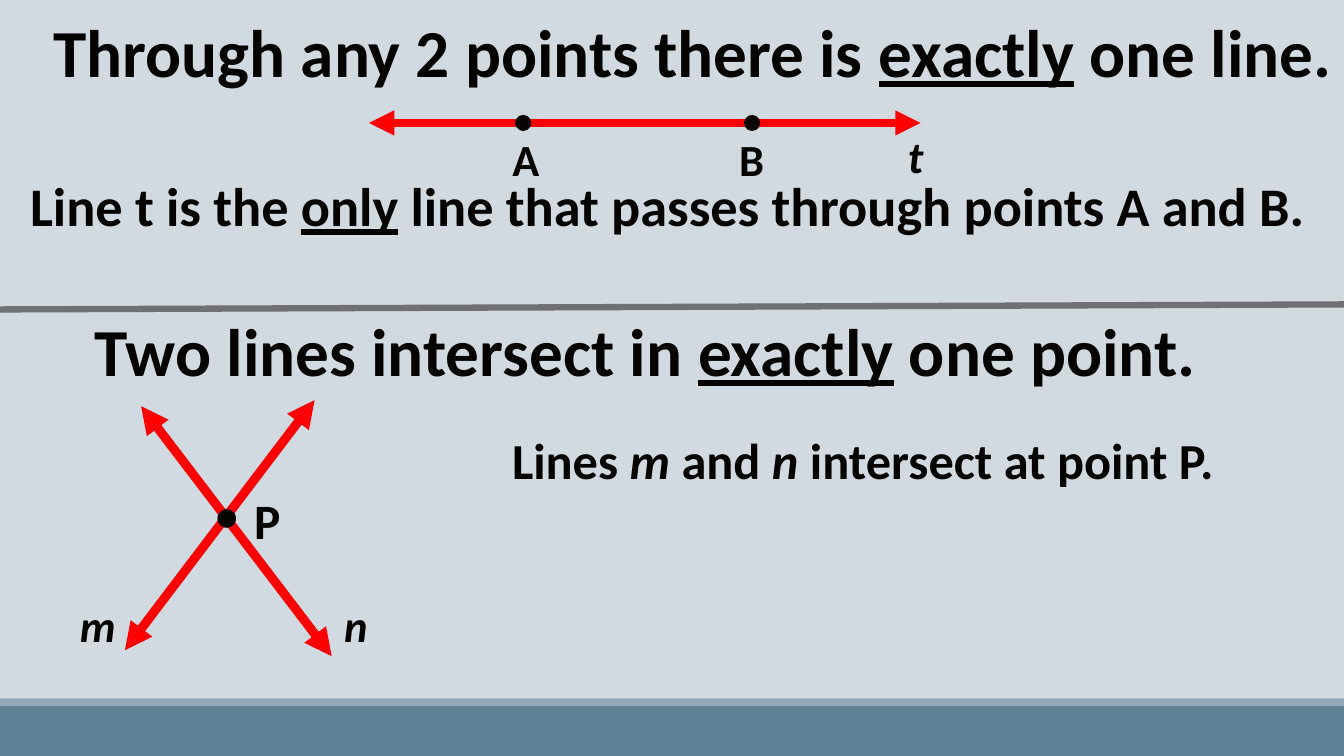
from dataclasses import dataclass

from lxml.etree import SubElement
from pptx import Presentation
from pptx.dml.color import RGBColor
from pptx.enum.shapes import MSO_CONNECTOR, MSO_SHAPE
from pptx.enum.text import MSO_ANCHOR, MSO_AUTO_SIZE, PP_ALIGN
from pptx.oxml.ns import qn
from pptx.util import Inches, Pt

INK = "040300"
RED = "FF0000"
GRAY = "6F6F74"
BACKGROUND = "D1D9E1"
FONT = "Calibri"
LEFT, CENTER = PP_ALIGN.LEFT, PP_ALIGN.CENTER


@dataclass(frozen=True)
class Span:
    text: str
    underline: bool = False
    italic: bool = False


@dataclass(frozen=True)
class TextItem:
    left: float
    top: float
    width: float
    height: float
    size: float
    spans: tuple[Span, ...]
    line_spacing: float = 1.0
    align: PP_ALIGN = LEFT


@dataclass(frozen=True)
class Line:
    start: tuple[float, float]
    end: tuple[float, float]
    color: str
    weight: float
    arrows: bool = True


@dataclass(frozen=True)
class Bar:
    top: float
    height: float
    color: str


def label(left: float, top: float, width: float, height: float, size: float,
          text: str, italic: bool = False, line_spacing: float = 1.0) -> TextItem:
    """Describe a centred one-letter label of the diagrams."""
    return TextItem(left, top, width, height, size, (Span(text, italic=italic),),
                    line_spacing, CENTER)


BARS = (Bar(7, 0.5, "618197"), Bar(6.93, 0.07, "92A9B9"))

TITLE = TextItem(0.43, 0.27, 12.9, 0.73, 48, (
    Span("Through any 2 points there is "),
    Span("exactly", underline=True),
    Span(" one line."),
), 0.7)

LINES = (
    Line((3.66, 1.22), (9.13, 1.22), RED, 6),
    Line((0, 3.07), (13.33, 3.02), GRAY, 4.5, arrows=False),
    Line((3.12, 3.97), (1.24, 6.45), RED, 6.5),
    Line((1.4, 4.03), (3.29, 6.51), RED, 6.5),
)

DOT_SIZE = 0.16
DOT_CENTERS = ((5.19, 1.22), (7.46, 1.22))

TEXTS = (
    label(4.98, 1.32, 0.47, 0.58, 31.8, "A", line_spacing=0.9),
    label(7.22, 1.32, 0.47, 0.58, 31.8, "B", line_spacing=0.9),
    label(8.9, 1.29, 0.36, 0.58, 31.8, "t", italic=True, line_spacing=0.9),
    TextItem(0.2, 1.66, 13.07, 0.75, 38.8, (
        Span("Line t is the "),
        Span("only", underline=True),
        Span(" line that passes through points A and B."),
    )),
    TextItem(0.84, 3.17, 11.25, 0.76, 48, (
        Span("Two lines intersect in "),
        Span("exactly", underline=True),
        Span(" one point."),
    ), 0.8),
    label(2.03, 4.82, 0.44, 0.58, 28.2, "●"),
    label(2.42, 4.81, 0.46, 0.69, 35.3, "P"),
    label(0.69, 5.88, 0.56, 0.64, 31.8, "m", italic=True),
    label(3.31, 5.88, 0.44, 0.64, 31.8, "n", italic=True),
    TextItem(4.98, 4.21, 8.35, 0.71, 36, (
        Span("Lines "),
        Span("m", italic=True),
        Span(" and "),
        Span("n", italic=True),
        Span(" intersect at point P."),
    )),
)


def rgb(color: str) -> RGBColor:
    return RGBColor.from_string(color)


def fill_text(box, item: TextItem) -> None:
    """Place a text shape and write its single paragraph run by run."""
    box.left, box.top = Inches(item.left), Inches(item.top)
    box.width, box.height = Inches(item.width), Inches(item.height)
    frame = box.text_frame
    frame.auto_size = MSO_AUTO_SIZE.NONE
    frame.word_wrap = item.align == LEFT
    frame.vertical_anchor = MSO_ANCHOR.TOP
    para = frame.paragraphs[0]
    para.alignment = item.align
    para.line_spacing = item.line_spacing
    for span in item.spans:
        run = para.add_run()
        run.text = span.text
        font = run.font
        font.name = FONT
        font.size = Pt(item.size)
        font.bold = True
        font.italic = span.italic
        font.underline = span.underline
        font.color.rgb = rgb(INK)


def add_text(page, item: TextItem) -> None:
    box = page.shapes.add_textbox(0, 0, Inches(item.width), Inches(item.height))
    fill_text(box, item)


def add_line(page, line: Line) -> None:
    ends = [Inches(value) for value in (*line.start, *line.end)]
    connector = page.shapes.add_connector(MSO_CONNECTOR.STRAIGHT, *ends)
    connector.line.color.rgb = rgb(line.color)
    connector.line.width = Pt(line.weight)
    if line.arrows:
        outline = connector.line._get_or_add_ln()
        for tag in ("a:headEnd", "a:tailEnd"):
            SubElement(outline, qn(tag), type="triangle")
    SubElement(connector._element.spPr, qn("a:effectLst"))


def add_solid(page, preset: MSO_SHAPE, left: float, top: float,
              width: float, height: float, color: str) -> None:
    """Draw a filled preset shape without outline or shadow."""
    shape = page.shapes.add_shape(preset, Inches(left), Inches(top),
                                  Inches(width), Inches(height))
    shape.shadow.inherit = False
    shape.fill.solid()
    shape.fill.fore_color.rgb = rgb(color)
    shape.line.fill.background()


def main() -> None:
    deck = Presentation()
    deck.slide_width, deck.slide_height = Inches(13.33), Inches(7.5)
    page = deck.slides.add_slide(deck.slide_layouts.get_by_name("Title Only"))
    page.background.fill.solid()
    page.background.fill.fore_color.rgb = rgb(BACKGROUND)

    for bar in BARS:
        add_solid(page, MSO_SHAPE.RECTANGLE, 0, bar.top, 13.33, bar.height, bar.color)
    fill_text(page.shapes.title, TITLE)
    for line in LINES:
        add_line(page, line)
    for x, y in DOT_CENTERS:
        add_solid(page, MSO_SHAPE.OVAL, x - DOT_SIZE / 2, y - DOT_SIZE / 2,
                  DOT_SIZE, DOT_SIZE, INK)
    for item in TEXTS:
        add_text(page, item)
    deck.save("out.pptx")


if __name__ == "__main__":
    main()
